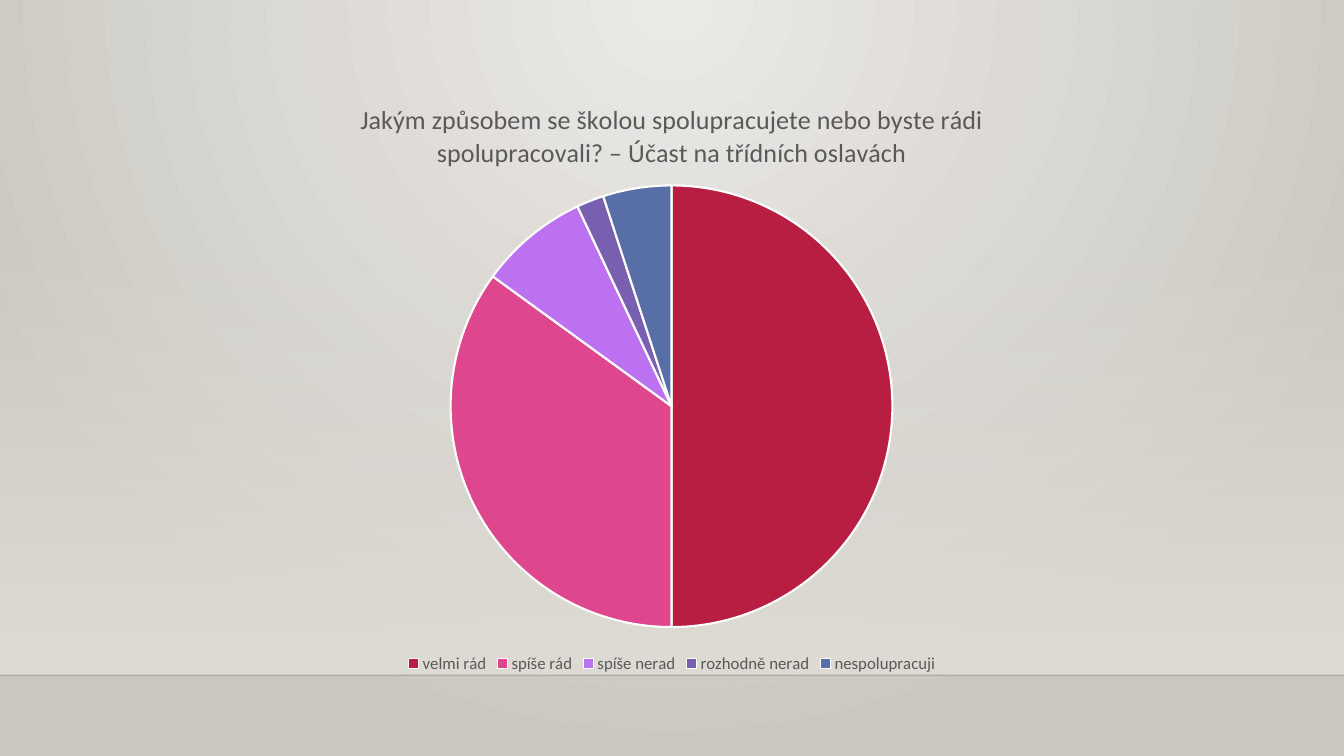
from pptx import Presentation
from pptx.chart.data import CategoryChartData
from pptx.dml.color import RGBColor
from pptx.enum.chart import XL_CHART_TYPE as ChartType, XL_LEGEND_POSITION as LegendPosition
from pptx.enum.shapes import MSO_CONNECTOR as Connector, MSO_SHAPE as Shape
from pptx.oxml import parse_xml
from pptx.oxml.ns import nsdecls, qn
from pptx.util import Inches, Pt

WIDTH, HEIGHT = Inches(13.33), Inches(7.5)
FLOOR_TOP = Inches(6.7)
FONT = "Calibri"
WHITE = RGBColor(0xFF, 0xFF, 0xFF)
TEXT_GRAY = RGBColor(0x59, 0x59, 0x59)
LIGHT = RGBColor(0xEC, 0xEA, 0xE7)
DARK = RGBColor(0xCA, 0xC7, 0xC1)
WALL = RGBColor(0xDF, 0xDB, 0xD5)
EDGE = RGBColor(0x00, 0x00, 0x01)

QUESTION = ("Jakým způsobem se školou spolupracujete nebo byste rádi "
            "spolupracovali? – Účast na třídních oslavách")
ANSWERS = [
    ("velmi rád", 50, RGBColor(0xB7, 0x1E, 0x42)),
    ("spíše rád", 35, RGBColor(0xDE, 0x47, 0x8E)),
    ("spíše nerad", 8, RGBColor(0xBC, 0x72, 0xF0)),
    ("rozhodně nerad", 2, RGBColor(0x79, 0x5F, 0xAF)),
    ("nespolupracuji", 5, RGBColor(0x58, 0x6E, 0xA6)),
]
PIE_LAYOUT = {"x": 0.253, "y": 0.177, "w": 0.493, "h": 0.739}


def set_font(font, size, color=TEXT_GRAY, bold=False):
    font.name = FONT
    font.size = Pt(size)
    font.bold = bold
    font.color.rgb = color


def write_text(text_frame, text, **font_format):
    text_frame.text = text
    set_font(text_frame.paragraphs[0].runs[0].font, **font_format)


def set_gradient(parent, stops, direction):
    stop_xml = "".join(
        f'<a:gs pos="{position * 1000}"><a:srgbClr val="{color}">'
        f'<a:alpha val="{opacity * 1000}"/></a:srgbClr></a:gs>'
        for position, color, opacity in stops)
    gradient = parse_xml(f'<a:gradFill {nsdecls("a")} rotWithShape="1">'
                         f'<a:gsLst>{stop_xml}</a:gsLst>{direction}</a:gradFill>')
    parent.replace(parent.find(qn("a:solidFill")), gradient)


def paint_background(slide):
    slide.background.fill.solid()
    properties = next(slide.element.iter(qn("p:bgPr")))
    set_gradient(properties, [(0, LIGHT, 100), (100, DARK, 100)],
                 '<a:path path="circle"><a:fillToRect l="43000" t="0" '
                 'r="43000" b="100000"/></a:path>')


def add_wall(slide, top):
    wall = slide.shapes.add_shape(Shape.RECTANGLE, 0, top, WIDTH, FLOOR_TOP - top)
    wall.shadow.inherit = False
    wall.line.fill.background()
    wall.fill.solid()
    set_gradient(wall.element.spPr, [(0, WALL, 0), (100, WALL, 100)],
                 '<a:lin ang="5400000" scaled="0"/>')


def add_floor_edge(slide):
    edge = slide.shapes.add_connector(Connector.STRAIGHT, 0, FLOOR_TOP, WIDTH, FLOOR_TOP)
    edge.line.width = Pt(1)
    edge.line.color.rgb = EDGE
    color = next(edge.element.spPr.iter(qn("a:srgbClr")))
    color.append(parse_xml(f'<a:alpha {nsdecls("a")} val="20000"/>'))
    edge.element.spPr.append(parse_xml(f'<a:effectLst {nsdecls("a")}/>'))


def place_plot(chart, layout):
    plot_area = next(chart.element.iter(qn("c:plotArea")))
    for automatic in plot_area.findall(qn("c:layout")):
        plot_area.remove(automatic)
    sizes = "".join(f'<c:{key} val="{value}"/>' for key, value in layout.items())
    plot_area.insert(0, parse_xml(
        f'<c:layout {nsdecls("c")}><c:manualLayout><c:layoutTarget val="inner"/>'
        f'<c:xMode val="edge"/><c:yMode val="edge"/>{sizes}</c:manualLayout></c:layout>'))


def add_answer_pie(slide, left, top, width, height):
    names, values, colors = zip(*ANSWERS)
    data = CategoryChartData()
    data.categories = names
    data.add_series("Series 1", values)
    chart = slide.shapes.add_chart(ChartType.PIE, left, top, width, height, data).chart
    set_font(chart.font, 10, EDGE)
    chart.has_title = True
    write_text(chart.chart_title.text_frame, QUESTION, size=18.6)
    chart.chart_title.include_in_layout = False
    chart.has_legend = True
    chart.legend.position = LegendPosition.BOTTOM
    chart.legend.include_in_layout = False
    set_font(chart.legend.font, 12)
    plot = chart.plots[0]
    plot.vary_by_categories = True
    for index, color in enumerate(colors):
        slice_format = plot.series[0].points[index].format
        slice_format.fill.solid()
        slice_format.fill.fore_color.rgb = color
        slice_format.line.color.rgb = WHITE
        slice_format.line.width = Pt(1.5)
    place_plot(chart, PIE_LAYOUT)


def main():
    presentation = Presentation()
    presentation.slide_width, presentation.slide_height = WIDTH, HEIGHT
    slide = presentation.slides.add_slide(presentation.slide_layouts[6])
    paint_background(slide)
    add_wall(slide, Inches(2.21))
    add_floor_edge(slide)
    add_answer_pie(slide, Inches(2.22), Inches(0.79), Inches(8.89), Inches(5.93))
    presentation.save("out.pptx")


if __name__ == "__main__":
    main()
